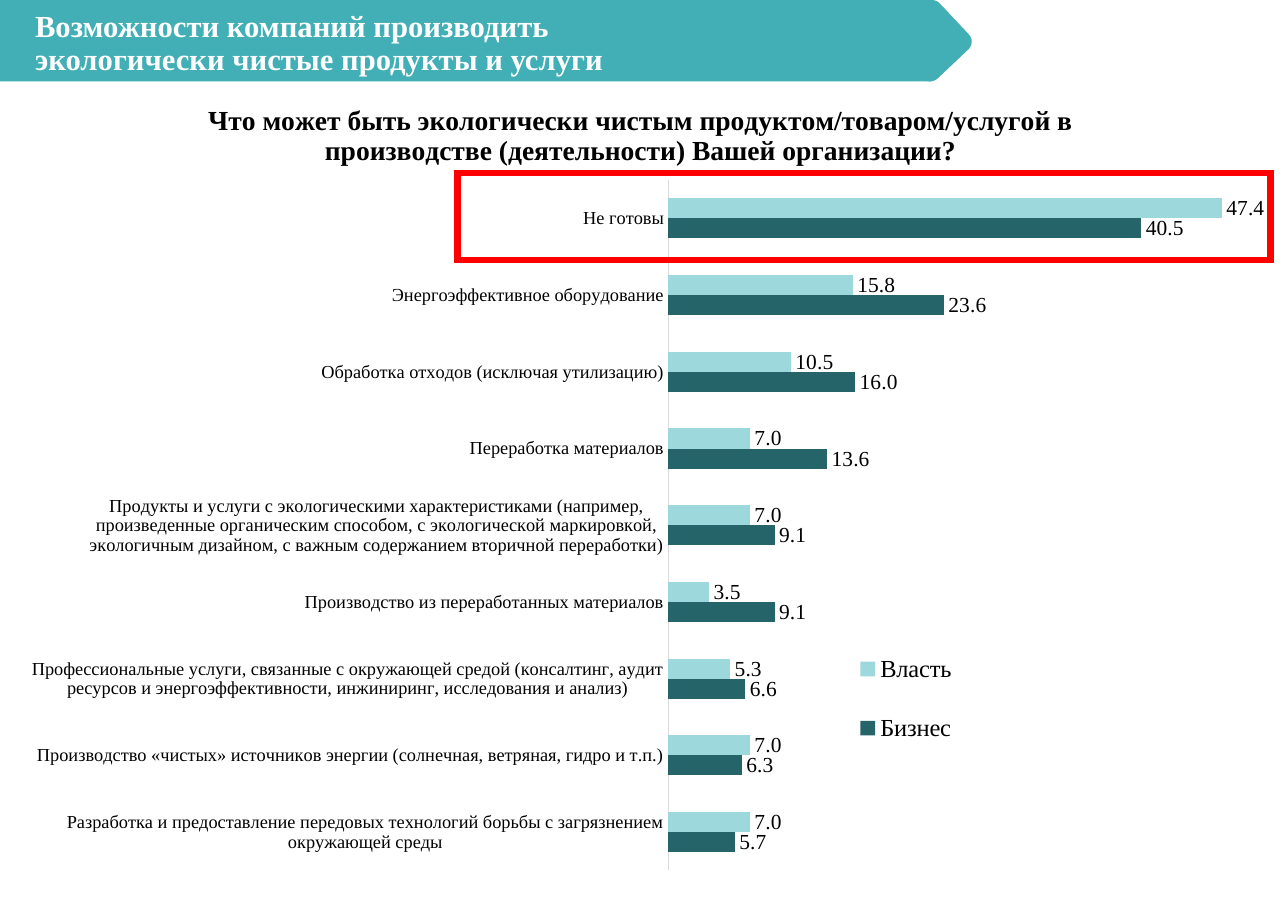
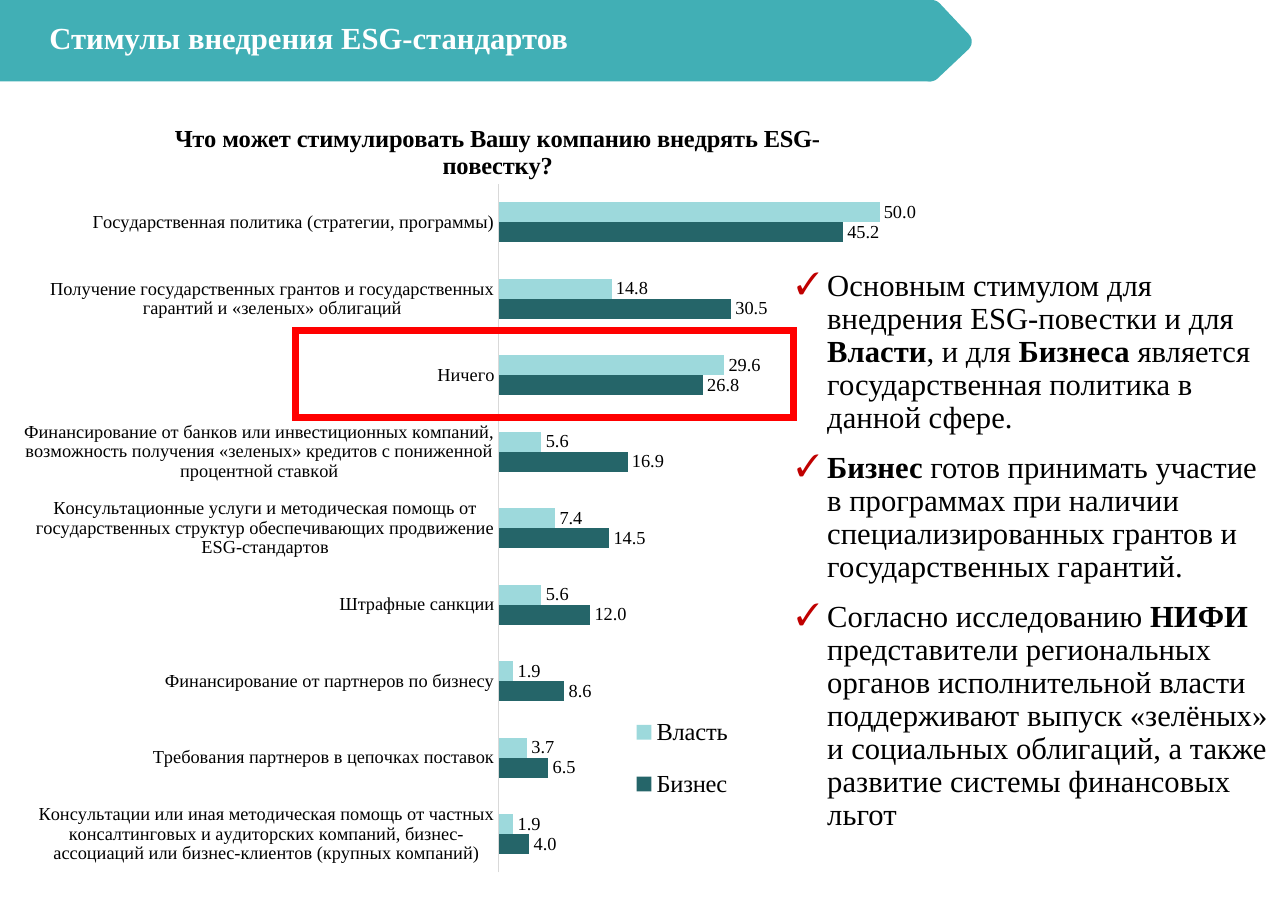
from dataclasses import dataclass

from lxml import etree
from pptx import Presentation
from pptx.chart.data import CategoryChartData
from pptx.dml.color import RGBColor
from pptx.enum.chart import XL_CHART_TYPE, XL_LABEL_POSITION, XL_LEGEND_POSITION, XL_TICK_MARK
from pptx.enum.shapes import MSO_SHAPE
from pptx.enum.text import MSO_ANCHOR
from pptx.oxml.ns import qn
from pptx.util import Inches, Pt

BAR_CLUSTERED = XL_CHART_TYPE.BAR_CLUSTERED
OUTSIDE_END = XL_LABEL_POSITION.OUTSIDE_END
LEGEND_BOTTOM = XL_LEGEND_POSITION.BOTTOM
NO_TICKS = XL_TICK_MARK.NONE
RECTANGLE = MSO_SHAPE.RECTANGLE
ROUNDED = MSO_SHAPE.ROUNDED_RECTANGLE
MIDDLE = MSO_ANCHOR.MIDDLE

TEAL = RGBColor(0x41, 0xAF, 0xB5)
DARK_TEAL = RGBColor(0x25, 0x65, 0x69)
PALE_TEAL = RGBColor(0x9D, 0xD9, 0xDC)
AXIS_GREY = RGBColor(0xD9, 0xD9, 0xD9)
RED = RGBColor(0xFF, 0x00, 0x00)
CHECK_RED = RGBColor(0xC0, 0x00, 0x00)
WHITE = RGBColor(0xFF, 0xFF, 0xFF)
BLACK = RGBColor(0x00, 0x00, 0x00)

FONT = "Times New Roman"
ONE_DECIMAL = "0.0"
SERIES_COLOURS = {"Бизнес": DARK_TEAL, "Власть": PALE_TEAL}


@dataclass(frozen=True)
class Box:
    left: float
    top: float
    width: float
    height: float

    def inches(self) -> tuple:
        return tuple(Inches(v) for v in (self.left, self.top, self.width, self.height))


@dataclass(frozen=True)
class Answer:
    text: str
    business: float
    government: float


@dataclass(frozen=True)
class Survey:
    """A question with its answers; plot, legend and question places are chart percentages."""
    question: str
    answers: list[Answer]
    box: Box
    plot: Box
    legend: Box
    question_at: tuple[float, float]
    question_size: int
    label_size: int
    axis_max: int


@dataclass(frozen=True)
class Run:
    text: str
    bold: bool = False


READINESS = Survey(
    "Что может быть экологически чистым продуктом/товаром/услугой в "
    "производстве (деятельности) Вашей организации?",
    [
        Answer("Разработка и предоставление передовых технологий борьбы с загрязнением "
               "окружающей среды", 5.7, 7),
        Answer("Производство «чистых» источников энергии (солнечная, ветряная, гидро и т.п.)",
               6.3, 7),
        Answer("Профессиональные услуги, связанные с окружающей средой (консалтинг, аудит "
               "ресурсов и энергоэффективности, инжиниринг, исследования и анализ)", 6.6, 5.3),
        Answer("Производство из переработанных материалов", 9.1, 3.5),
        Answer("Продукты и услуги с экологическими характеристиками (например, "
               "произведенные органическим способом, с экологической маркировкой, "
               "экологичным дизайном, с важным содержанием вторичной переработки)", 9.1, 7),
        Answer("Переработка материалов", 13.6, 7),
        Answer("Обработка отходов (исключая утилизацию)", 16, 10.5),
        Answer("Энергоэффективное оборудование", 23.6, 15.8),
        Answer("Не готовы", 40.5, 47.4),
    ],
    box=Box(0.25, 0.71, 11.23, 7.23),
    plot=Box(51.8, 12.8, 47.2, 86.7),
    legend=Box(66.5, 68.5, 9, 18.8),
    question_at=(14.2, 2.5),
    question_size=18, label_size=14, axis_max=50,
)

INCENTIVES = Survey(
    "Что может стимулировать Вашу компанию внедрять ESG-повестку?",
    [
        Answer("Консультации или иная методическая помощь от частных консалтинговых и "
               "аудиторских компаний, бизнес-ассоциаций или бизнес-клиентов "
               "(крупных компаний)", 4, 1.9),
        Answer("Требования партнеров в цепочках поставок", 6.5, 3.7),
        Answer("Финансирование от партнеров по бизнесу", 8.6, 1.9),
        Answer("Штрафные санкции", 12, 5.6),
        Answer("Консультационные услуги и методическая помощь от государственных структур "
               "обеспечивающих продвижение ESG-стандартов", 14.5, 7.4),
        Answer("Финансирование от банков или инвестиционных компаний, возможность получения "
               "«зеленых» кредитов с пониженной процентной ставкой", 16.9, 5.6),
        Answer("Ничего", 26.8, 29.6),
        Answer("Получение государственных грантов и государственных гарантий и «зеленых» "
               "облигаций", 30.5, 14.8),
        Answer("Государственная политика (стратегии, программы)", 45.2, 50),
    ],
    box=Box(0.21, 0.88, 8.62, 7.38),
    plot=Box(50.1, 10.7, 48.1, 84.7),
    legend=Box(63.6, 73.5, 11.6, 15.7),
    question_at=(15.5, 2.6),
    question_size=16, label_size=12, axis_max=60,
)

FINDINGS = [
    [Run("Основным стимулом для внедрения ESG-повестки и для "), Run("Власти", True),
     Run(", и для "), Run("Бизнеса", True),
     Run(" является государственная политика в данной сфере.")],
    [Run("Бизнес", True),
     Run(" готов принимать участие в программах при наличии специализированных грантов "
         "и государственных гарантий.")],
    [Run("Согласно исследованию "), Run("НИФИ", True),
     Run(" представители региональных органов исполнительной власти поддерживают выпуск "
         "«зелёных» и социальных облигаций, а также развитие системы финансовых льгот")],
]


def style_font(font, size: float, colour: RGBColor = BLACK, bold: bool = False) -> None:
    font.name = FONT
    font.size = Pt(size)
    font.bold = bold
    font.color.rgb = colour


def add_header(slide, title_lines: list[str], title_box: Box) -> None:
    """Draw the arrow-shaped band and the slide title on it."""
    for preset, box, rotation in ((RECTANGLE, Box(0, 0, 8.45, 0.74), 0),
                                  (ROUNDED, Box(8.16, 0.08, 0.58, 0.58), 46.7)):
        band = slide.shapes.add_shape(preset, *box.inches())
        band.rotation = rotation
        band.shadow.inherit = False
        band.fill.solid()
        band.fill.fore_color.rgb = TEAL
        band.line.fill.background()

    frame = slide.shapes.add_textbox(*title_box.inches()).text_frame
    frame.word_wrap = True
    frame.vertical_anchor = MIDDLE
    title = frame.paragraphs[0]
    title.line_spacing = 0.9
    for number, line in enumerate(title_lines):
        if number:
            title.add_line_break()
        run = title.add_run()
        run.text = line
        style_font(run.font, 20, WHITE, bold=True)


def place_chart_part(part, index: int, target: str = "", **percentages: float) -> None:
    """Give a chart part a manual layout as its child number index."""
    for old in part.findall(qn("c:layout")):
        part.remove(old)
    layout = etree.Element(qn("c:layout"))
    manual = etree.SubElement(layout, qn("c:manualLayout"))
    settings = {"layoutTarget": target} if target else {}
    settings |= {"xMode": "edge", "yMode": "edge"}
    settings |= {tag: f"{value / 100:.3f}" for tag, value in percentages.items()}
    for tag, value in settings.items():
        etree.SubElement(manual, qn(f"c:{tag}")).set("val", value)
    part.insert(index, layout)


def add_survey_chart(slide, survey: Survey) -> None:
    data = CategoryChartData(number_format=ONE_DECIMAL)
    data.categories = [answer.text for answer in survey.answers]
    data.add_series("Бизнес", [answer.business for answer in survey.answers])
    data.add_series("Власть", [answer.government for answer in survey.answers])
    chart = slide.shapes.add_chart(BAR_CLUSTERED, *survey.box.inches(), data).chart
    style_font(chart.font, 12)

    question = chart.chart_title.text_frame.paragraphs[0].add_run()
    question.text = survey.question
    style_font(question.font, survey.question_size, bold=True)
    chart.chart_title.include_in_layout = False

    chart.has_legend = True
    chart.legend.position = LEGEND_BOTTOM
    chart.legend.include_in_layout = False
    style_font(chart.legend.font, 16)

    answers_axis = chart.category_axis
    answers_axis.major_tick_mark = NO_TICKS
    answers_axis.format.line.color.rgb = AXIS_GREY
    answers_axis.format.line.width = Pt(0.75)
    style_font(answers_axis.tick_labels.font, 12)
    share_axis = chart.value_axis
    share_axis.visible = False
    share_axis.has_major_gridlines = False
    share_axis.minimum_scale = 0
    share_axis.maximum_scale = survey.axis_max

    bars = chart.plots[0]
    bars.gap_width = 182
    bars.vary_by_categories = False
    for series in bars.series:
        series.format.fill.solid()
        series.format.fill.fore_color.rgb = SERIES_COLOURS[series.name]
        labels = series.data_labels
        labels.show_value = True
        labels.position = OUTSIDE_END
        labels.number_format = ONE_DECIMAL
        labels.number_format_is_linked = False
        style_font(labels.font, survey.label_size)

    title, plot, legend = (chart.element.find(f"{qn('c:chart')}/{qn(tag)}")
                           for tag in ("c:title", "c:plotArea", "c:legend"))
    left, top = survey.question_at
    place_chart_part(title, 1, x=left, y=top)
    for part, index, target, box in ((plot, 0, "inner", survey.plot),
                                     (legend, 1, "", survey.legend)):
        place_chart_part(part, index, target, x=box.left, y=box.top, w=box.width, h=box.height)


def add_highlight(slide, box: Box) -> None:
    """Draw a red frame with square corners."""
    highlight = slide.shapes.add_shape(RECTANGLE, *box.inches())
    highlight.shadow.inherit = False
    highlight.fill.background()
    highlight.line.color.rgb = RED
    highlight.line.width = Pt(4.5)
    outline = highlight.element.spPr.find(qn("a:ln"))
    etree.SubElement(outline, qn("a:miter")).set("lim", "800000")


def add_check_mark(paragraph) -> None:
    properties = paragraph._p.get_or_add_pPr()
    properties.set("marL", str(Inches(0.28)))
    properties.set("indent", str(-Inches(0.28)))
    colour = etree.SubElement(properties, qn("a:buClr"))
    etree.SubElement(colour, qn("a:srgbClr")).set("val", str(CHECK_RED))
    etree.SubElement(properties, qn("a:buFont")).set("typeface", FONT)
    etree.SubElement(properties, qn("a:buChar")).set("char", "✓")


def add_findings(slide, findings: list[list[Run]], box: Box) -> None:
    frame = slide.shapes.add_textbox(*box.inches()).text_frame
    frame.word_wrap = True
    for number, finding in enumerate(findings):
        paragraph = frame.add_paragraph() if number else frame.paragraphs[0]
        add_check_mark(paragraph)
        paragraph.line_spacing = 0.9
        if number:
            paragraph.space_before = Pt(11)
        for part in finding:
            run = paragraph.add_run()
            run.text = part.text
            style_font(run.font, 20, bold=part.bold)


def main() -> None:
    deck = Presentation()
    deck.slide_width, deck.slide_height = Inches(11.69), Inches(8.27)
    blank = deck.slide_layouts[6]

    readiness = deck.slides.add_slide(blank)
    add_header(readiness, ["Возможности компаний производить",
                           "экологически чистые продукты и услуги"], Box(0.22, 0.07, 7.63, 0.66))
    add_survey_chart(readiness, READINESS)
    add_highlight(readiness, Box(4.15, 1.57, 7.38, 0.79))

    incentives = deck.slides.add_slide(blank)
    add_header(incentives, ["Стимулы внедрения ESG-стандартов"], Box(0.35, 0.03, 6.32, 0.66))
    add_survey_chart(incentives, INCENTIVES)
    add_findings(incentives, FINDINGS, Box(7.13, 2.4, 4.49, 5.32))
    add_highlight(incentives, Box(2.68, 3, 4.52, 0.79))

    deck.save("out.pptx")


if __name__ == "__main__":
    main()
